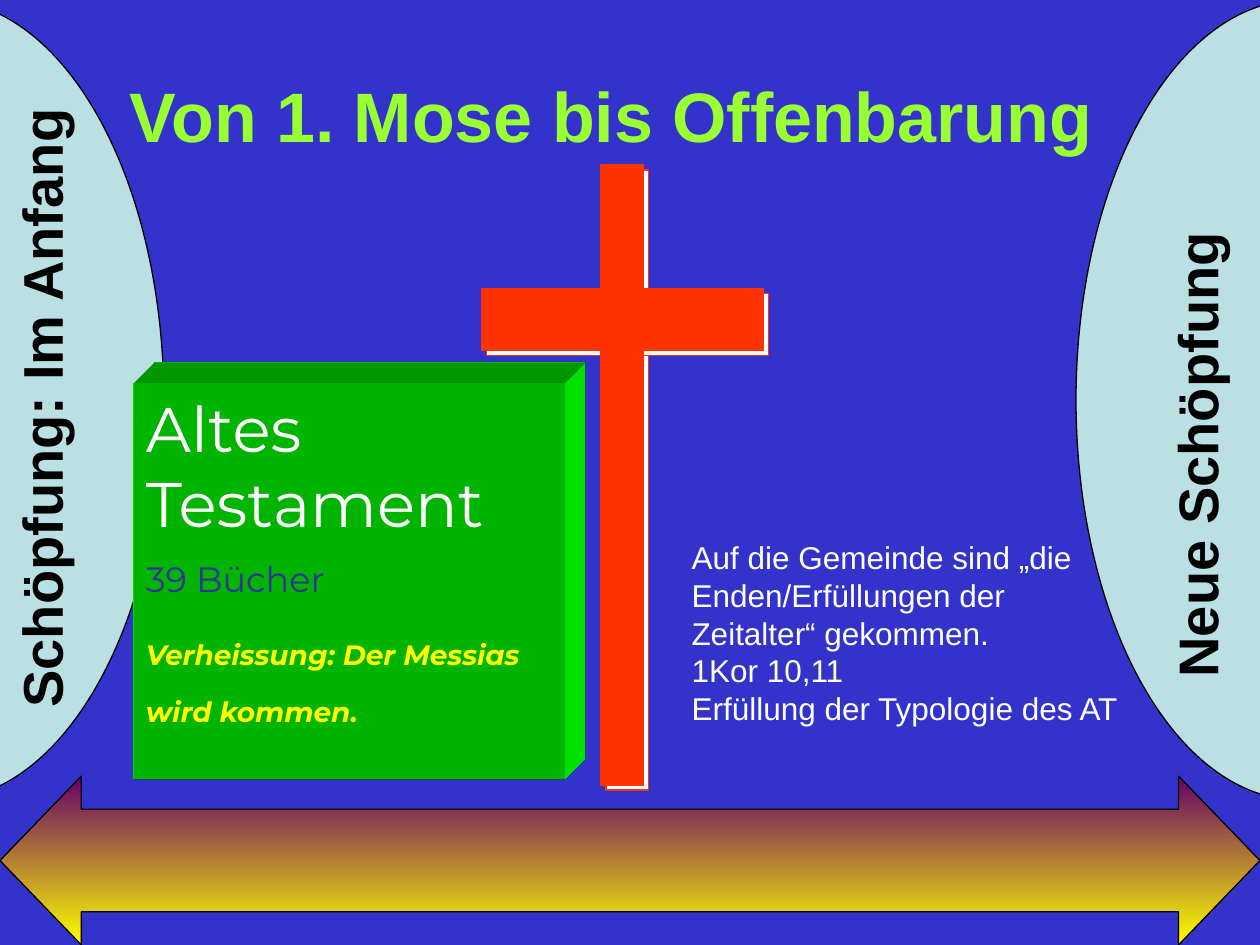
from lxml import etree
from pptx import Presentation
from pptx.dml.color import RGBColor
from pptx.enum.shapes import MSO_SHAPE
from pptx.enum.text import MSO_ANCHOR, PP_ALIGN
from pptx.util import Inches, Pt

RECTANGLE, OVAL = MSO_SHAPE.RECTANGLE, MSO_SHAPE.OVAL
DOUBLE_ARROW = MSO_SHAPE.LEFT_RIGHT_ARROW
TOP, MIDDLE = MSO_ANCHOR.TOP, MSO_ANCHOR.MIDDLE
LEFT, CENTER = PP_ALIGN.LEFT, PP_ALIGN.CENTER

BLUE = RGBColor(0x33, 0x33, 0xCC)
NAVY = RGBColor(0x33, 0x33, 0x99)
LIME = RGBColor(0x99, 0xFF, 0x33)
GREEN = RGBColor(0x00, 0xFF, 0x00)
PALE = RGBColor(0xBB, 0xE0, 0xE3)
RED = RGBColor(0xFF, 0x33, 0x00)
PURPLE = RGBColor(0x66, 0x00, 0x66)
YELLOW = RGBColor(0xFF, 0xFF, 0x00)
WHITE = RGBColor(0xFF, 0xFF, 0xFF)
BLACK = RGBColor(0x00, 0x00, 0x00)

EXTRUSION = """<root xmlns:a="http://schemas.openxmlformats.org/drawingml/2006/main">
<a:scene3d><a:camera prst="legacyObliqueTopRight"/><a:lightRig rig="legacyFlat3" dir="b"/></a:scene3d>
<a:sp3d extrusionH="430200" prstMaterial="legacyMatte">
<a:bevelT w="13500" h="13500" prst="angle"/><a:bevelB w="13500" h="13500" prst="angle"/>
<a:extrusionClr><a:srgbClr val="00FF00"/></a:extrusionClr></a:sp3d></root>"""

deck = Presentation()
deck.slide_width, deck.slide_height = Inches(10), Inches(7.5)
page = deck.slides.add_slide(deck.slide_layouts[6])
page.background.fill.solid()
page.background.fill.fore_color.rgb = BLUE


def add_figure(parent, kind, place, fill, line=None):
    figure = parent.add_shape(kind, *map(Inches, place))
    figure.shadow.inherit = False
    figure.fill.solid()
    figure.fill.fore_color.rgb = fill
    if line is None:
        figure.line.fill.background()
    else:
        figure.line.color.rgb = line
        figure.line.width = Pt(0.75)
    return figure


def write(box, text, size=18, color=WHITE, font="Arial", bold=False, italic=False,
          align=LEFT, anchor=TOP, before=0, spacing=None, wrap=True):
    frame = box.text_frame
    frame.word_wrap = wrap
    frame.vertical_anchor = anchor
    for line in text.split("\n"):
        para = frame.paragraphs[0] if not frame.text else frame.add_paragraph()
        para.alignment = align
        para.space_before = Pt(before)
        if spacing:
            para.line_spacing = spacing
        span = para.add_run()
        span.text = line
        span.font.name = font
        span.font.size = Pt(size)
        span.font.bold = bold
        span.font.italic = italic
        span.font.color.rgb = color


title = page.shapes.add_textbox(Inches(0.35), Inches(0.28), Inches(9), Inches(1.25))
write(title, "Von 1. Mose bis Offenbarung", size=40, color=LIME, bold=True,
      align=CENTER, anchor=MIDDLE)

timeline = add_figure(page.shapes, DOUBLE_ARROW, (0, 6.16, 10, 1.34), YELLOW, BLACK)
timeline.adjustments[0] = 0.608
timeline.adjustments[1] = 0.482
timeline.fill.gradient()
timeline.fill.gradient_angle = 270
for stop, color, position in zip(timeline.fill.gradient_stops, (PURPLE, YELLOW), (0, 1)):
    stop.color.rgb = color
    stop.position = position

for left in (-2.24, 8.54):
    add_figure(page.shapes, OVAL, (left, 0, 3.54, 6.35), PALE, BLACK)

for text, place in (
    ("Schöpfung: Im Anfang", (-2.54, 2.54, 5.72, 0.63)),
    ("Neue Schöpfung", (7.6, 3.27, 3.78, 0.63)),
):
    label = page.shapes.add_textbox(*map(Inches, place))
    label.rotation = 270
    write(label, text, size=32, color=BLACK, bold=True)

testament = add_figure(page.shapes, RECTANGLE, (1.06, 3.04, 3.42, 3.15), GREEN)
for element in list(etree.fromstring(EXTRUSION)):
    testament.element.spPr.append(element)
write(testament, "Altes Testament", size=36, font="Montserrat")
write(testament, "39 Bücher", size=20, color=NAVY, font="Montserrat", before=10)
write(testament, "Verheissung: Der Messias wird kommen.", size=16, color=YELLOW,
      font="Montserrat", bold=True, italic=True, before=8, spacing=1.7)

cross = page.shapes.add_group_shape()
for offset, fill in ((0.04, WHITE), (0, RED)):
    for left, top, width, height in ((4.77, 1.31, 0.34, 4.92), (3.82, 2.29, 2.24, 0.49)):
        add_figure(cross.shapes, RECTANGLE, (left + offset, top + offset, width, height), fill, RED)

fulfilment = page.shapes.add_textbox(Inches(5.39), Inches(4.22), Inches(3.61), Inches(1.62))
write(fulfilment, "Auf die Gemeinde sind „die\nEnden/Erfüllungen der\nZeitalter“ gekommen.\n"
      "1Kor 10,11\nErfüllung der Typologie des AT", wrap=False)

deck.save("out.pptx")
